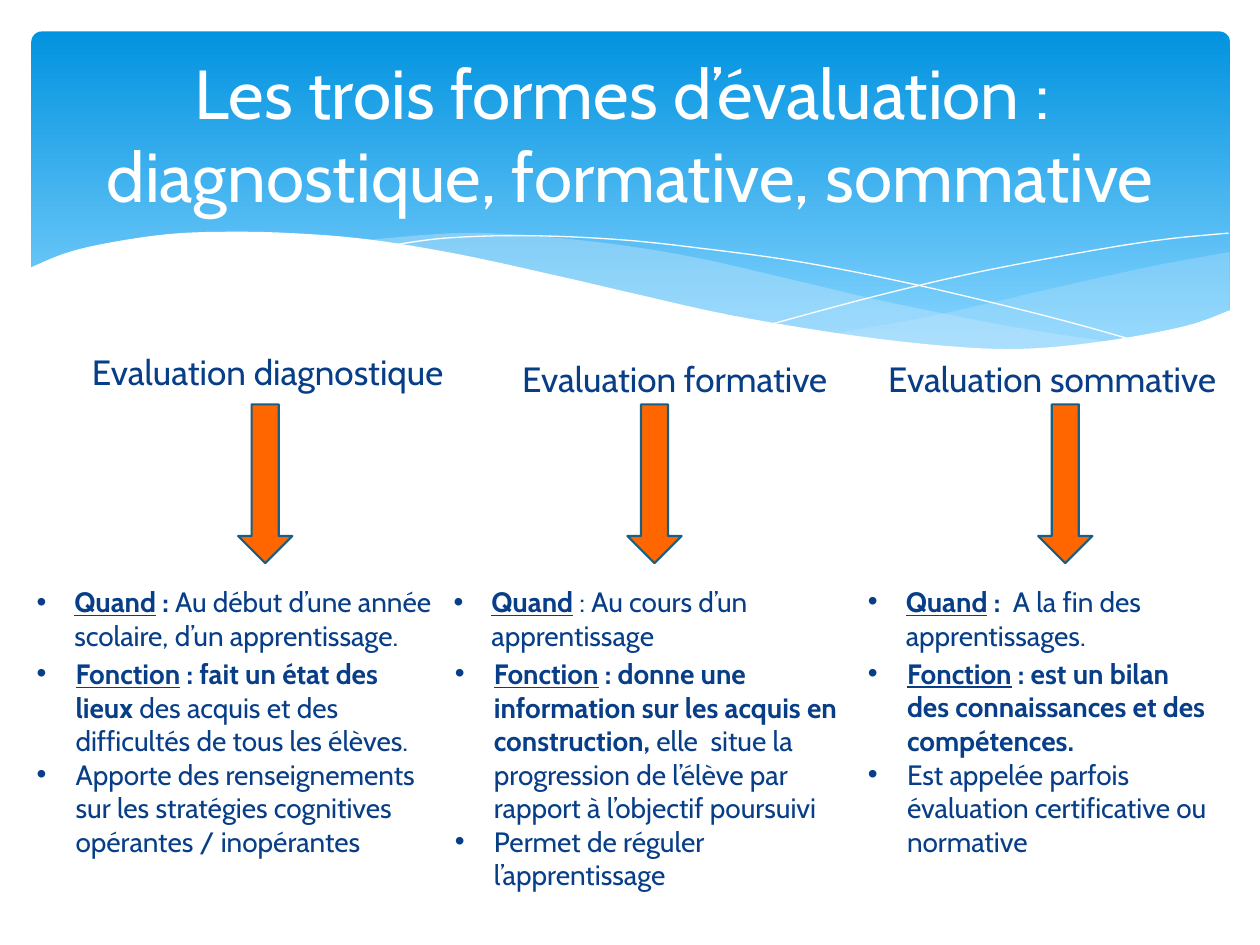
import dataclasses

import lxml.etree
import pptx
import pptx.dml.color
import pptx.enum.shapes
import pptx.enum.text
import pptx.oxml.ns
import pptx.util

qn = pptx.oxml.ns.qn
ALIGN = pptx.enum.text.PP_ALIGN
ANCHOR = pptx.enum.text.MSO_ANCHOR
SHAPE = pptx.enum.shapes.MSO_SHAPE


@dataclasses.dataclass(frozen=True)
class Theme:
    font: str = "Cabin"
    title_size: float = 39.6
    label_size: float = 20
    body_size: float = 16
    white: str = "FFFFFF"
    navy: str = "073E87"
    sky_top: str = "0293E0"
    sky_bottom: str = "83D3FE"
    wave: str = "C6E7FC"
    arrow: str = "FF6600"
    arrow_edge: str = "195F84"


def rgb(value):
    return pptx.dml.color.RGBColor.from_string(value)


def smooth(knots, steps=6):
    """Points of a Catmull-Rom curve running through the knots."""
    ends = [knots[0], *knots, knots[-1]]
    points = [knots[0]]
    for a, b, c, d in zip(ends, ends[1:], ends[2:], ends[3:]):
        for t in (i / steps for i in range(1, steps + 1)):
            points.append(tuple(
                (2 * q + (r - p) * t + (2 * p - 5 * q + 4 * r - s) * t ** 2
                 + (3 * q - p - 3 * r + s) * t ** 3) / 2
                for p, q, r, s in zip(a, b, c, d)))
    return points


class SlideBuilder:
    """Draws on one slide; lengths are cells of a 100 by 75 grid."""

    COLUMNS, ROWS = 100, 75

    def __init__(self, prs, theme):
        self.theme = theme
        self.cell_w = prs.slide_width / self.COLUMNS
        self.cell_h = prs.slide_height / self.ROWS
        self.slide = prs.slides.add_slide(prs.slide_layouts.get_by_name("Comparison"))
        self.shapes = self.slide.shapes
        self.bodies = [sp for sp in self.slide.placeholders
                       if sp.placeholder_format.idx in range(1, 5)]

    def emu(self, x, y):
        return round(x * self.cell_w), round(y * self.cell_h)

    def box(self, x, y, w, h):
        return *self.emu(x, y), *self.emu(w, h)

    def place(self, sp, box):
        """Move a placeholder into its box and to the front."""
        sp.left, sp.top, sp.width, sp.height = self.box(*box)
        self.shapes._spTree.append(sp._element)
        return sp

    def frame(self, sp, anchor=ANCHOR.TOP):
        tf = sp.text_frame
        tf.word_wrap = True
        tf.auto_size = pptx.enum.text.MSO_AUTO_SIZE.NONE
        tf.vertical_anchor = anchor
        return tf

    def run(self, p, text, size, color, style=""):
        r = p.add_run()
        r.text = text
        r.font.name = self.theme.font
        r.font.size = pptx.util.Pt(size)
        r.font.color.rgb = rgb(color)
        r.font.bold = "b" in style
        r.font.underline = "u" in style

    def title(self, lines, box):
        tf = self.frame(self.place(self.shapes.title, box), ANCHOR.MIDDLE)
        p = tf.paragraphs[0]
        p.alignment = ALIGN.CENTER
        for i, line in enumerate(lines):
            if i:
                p.add_line_break()
            self.run(p, line, self.theme.title_size, self.theme.white)

    def label(self, text, box):
        p = self.frame(self.shapes.add_textbox(*self.box(*box))).paragraphs[0]
        p.alignment = ALIGN.CENTER
        self.run(p, text, self.theme.label_size, self.theme.navy)

    def bullet(self, p, indent):
        pPr = p._p.get_or_add_pPr()
        hang = self.emu(indent, 0)[0]
        pPr.set("marL", str(hang))
        pPr.set("indent", str(-hang))
        color = lxml.etree.SubElement(pPr, qn("a:buClr"))
        lxml.etree.SubElement(color, qn("a:srgbClr"), val=self.theme.navy)
        lxml.etree.SubElement(pPr, qn("a:buFont"), typeface="Arial")
        lxml.etree.SubElement(pPr, qn("a:buChar"), char="•")

    def bullets(self, items, box, indent):
        """Fill a free body placeholder, or a text box once none is left."""
        if self.bodies:
            sp = self.place(self.bodies.pop(0), box)
        else:
            sp = self.shapes.add_textbox(*self.box(*box))
        tf = self.frame(sp)
        for i, runs in enumerate(items):
            p = tf.add_paragraph() if i else tf.paragraphs[0]
            self.bullet(p, indent)
            p.alignment = ALIGN.LEFT
            p.space_before = pptx.util.Pt(0)
            for text, style in runs:
                self.run(p, text, self.theme.body_size, self.theme.navy, style)

    def arrow(self, box):
        sp = self.shapes.add_shape(SHAPE.DOWN_ARROW, *self.box(*box))
        sp.shadow.inherit = False
        sp.fill.solid()
        sp.fill.fore_color.rgb = rgb(self.theme.arrow)
        sp.line.color.rgb = rgb(self.theme.arrow_edge)
        sp.line.width = pptx.util.Pt(1.25)

    def banner(self, box):
        sp = self.shapes.add_shape(SHAPE.ROUNDED_RECTANGLE, *self.box(*box))
        sp.adjustments[0] = 0.03
        sp.shadow.inherit = False
        sp.line.fill.background()
        sp.fill.gradient()
        sp.fill.gradient_angle = 270
        stops = ((0, self.theme.sky_top), (0.9, self.theme.sky_bottom))
        for stop, (position, color) in zip(sp.fill.gradient_stops, stops):
            stop.position = position
            stop.color.rgb = rgb(color)

    def outline(self, points, close):
        start, *rest = [self.emu(*point) for point in points]
        builder = self.shapes.build_freeform(*start)
        builder.add_line_segments(rest, close=close)
        sp = builder.convert_to_shape()
        sp.shadow.inherit = False
        return sp

    def wave(self, edges, color, opacity=100):
        sp = self.outline([pt for edge in edges for pt in smooth(edge)], True)
        sp.line.fill.background()
        sp.fill.solid()
        sp.fill.fore_color.rgb = rgb(color)
        if opacity < 100:
            clr = sp._element.spPr.find(qn("a:solidFill"))[0]
            lxml.etree.SubElement(clr, qn("a:alpha"), val=str(opacity * 1000))

    def hairline(self, knots):
        sp = self.outline(smooth(knots), False)
        sp.fill.background()
        sp.line.color.rgb = rgb(self.theme.white)
        sp.line.width = pptx.util.Pt(0)


RIGHT_WAVE = [
    [(97.6, 20), (92.1, 21), (86.1, 22.3), (77.9, 24.2), (72.9, 25.3), (66.1, 26.5)],
    [(66.1, 26.5), (70.5, 27.1), (75.7, 27.6), (81.4, 27.8), (87.2, 27.4),
     (92.1, 26.5), (97.6, 24.7)]]
MIDDLE_WAVE = [
    [(89.3, 27.3), (80.7, 26), (70.6, 24), (62.9, 22.2), (55.5, 20.5),
     (48.9, 19.4), (42, 18.7), (36.1, 18.5), (28.6, 19.1)],
    [(28.6, 19.1), (36.2, 20.3), (44.9, 22.2), (53, 24), (61.8, 25.8),
     (69.5, 27), (77.3, 27.7), (83.8, 27.7), (89.3, 27.3)]]
FALLING_LINE = [(30.9, 19.5), (35.3, 18.9), (41.6, 18.7), (48.9, 19), (55.6, 19.7),
                (63.6, 20.8), (72.7, 22.6), (83.1, 25.1), (90.7, 27.2)]
RISING_LINE = [(61.3, 25.7), (69.5, 23.5), (77.6, 21.6), (86.6, 19.9),
               (92.4, 19), (97.5, 18.5)]
WHITE_WAVE = [
    [(97.7, 24.6), (94, 25.9), (87.5, 27.1), (80.9, 27.7), (74.4, 27.4), (66.8, 26.5),
     (57.9, 25), (50.3, 23.3), (44.7, 22), (36.5, 20.2), (29.2, 19), (23, 18.5),
     (17.7, 18.4), (13.2, 18.6), (8.5, 19.3), (5.2, 20.1), (2.3, 21.3)],
    [(2.3, 32.9), (97.7, 32.9)]]

# label, label box, arrow left, list left and width, when, function items
FORMS = [
    ("Evaluation diagnostique", (4.3, 27.3, 33.9, 4.4), 18.9, (1.9, 33.9), (1.9, 32.6),
     [("Quand", "bu"), (" : ", "b"),
      ("Au début d’une année scolaire, d’un apprentissage.", "")],
     [[("Fonction", "bu"), (" : fait un état des lieux ", "b"),
       ("des acquis et des difficultés de tous les élèves.", "")],
      [("Apporte des renseignements sur les stratégies cognitives "
        "opérantes / inopérantes", "")]]),
    ("Evaluation formative", (38.2, 27.9, 30.7, 4.2), 49.8, (35, 33.9), (35.1, 33.6),
     [("Quand", "bu"), (" : Au cours d’un apprentissage", "")],
     [[("Fonction", "bu"),
       (" : donne une information sur les acquis en construction,", "b"),
       (" elle  situe la progression de l’élève par rapport à l’objectif poursuivi", "")],
      [("Permet de réguler l’apprentissage", "")]]),
    ("Evaluation sommative", (68.9, 27.9, 29.2, 4.2), 82.4, (67.9, 29.2), (67.9, 29.2),
     [("Quand", "bu"), (" : ", "b"), (" A la fin des apprentissages.", "")],
     [[("Fonction", "bu"),
       (" : est un bilan des connaissances et des compétences.", "b")],
      [("Est appelée parfois évaluation certificative ou normative", "")]]),
]


def main():
    prs = pptx.Presentation()
    prs.slide_width = pptx.util.Inches(10)
    prs.slide_height = pptx.util.Inches(7.5)
    theme = Theme()
    page = SlideBuilder(prs, theme)

    page.banner((2.5, 2.5, 95.1, 27))
    page.wave(RIGHT_WAVE, theme.wave, 29)
    page.wave(MIDDLE_WAVE, theme.wave, 40)
    page.hairline(FALLING_LINE)
    page.hairline(RISING_LINE)
    page.wave(WHITE_WAVE, theme.white)

    page.title(["Les trois formes d’évaluation : ", "diagnostique, formative, sommative"],
               (5, 3.7, 90, 13.7))
    for label, label_box, arrow_x, when_x, role_x, when, roles in FORMS:
        page.label(label, label_box)
        page.arrow((arrow_x, 32.1, 4.3, 12.6))
        page.bullets([when], (when_x[0], 45.9, when_x[1], 5.7), 3)
        page.bullets(roles, (role_x[0], 51.6, role_x[1], 17.2), 3.1)

    prs.save("out.pptx")


if __name__ == "__main__":
    main()
